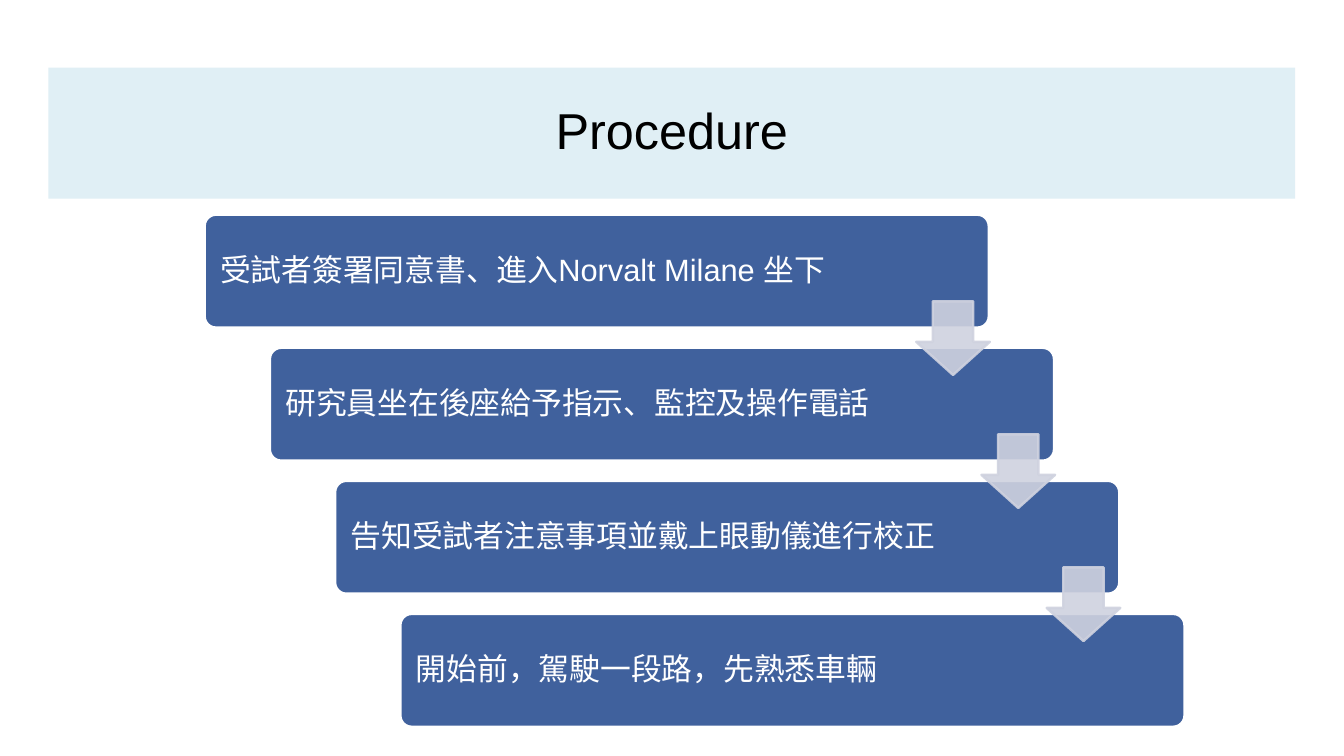
from dataclasses import dataclass

from lxml import etree
from pptx import Presentation
from pptx.dml.color import RGBColor
from pptx.enum.shapes import MSO_SHAPE as Preset
from pptx.enum.text import MSO_ANCHOR as Anchor, PP_ALIGN as Align
from pptx.oxml.ns import qn
from pptx.shapes.autoshape import Shape
from pptx.slide import Slide
from pptx.util import Pt

FONT = "Arial"
STEP_LEFT, STEP_TOP = 146.16, 153.36
STEP_WIDTH, STEP_HEIGHT = 560.16, 80.64
SHIFT_RIGHT, SHIFT_DOWN = 46.6, 95.04
ARROW_LEFT, ARROW_TOP, ARROW_SIZE = 654.48, 215.28, 52.56


@dataclass
class Box:
    left: float
    top: float
    width: float
    height: float


@dataclass
class Step:
    text: str
    right_inset: float = 106.5


STEPS = [
    Step("受試者簽署同意書、進入Norvalt Milane 坐下", 97.8),
    Step("研究員坐在後座給予指示、監控及操作電話"),
    Step("告知受試者注意事項並戴上眼動儀進行校正"),
    Step("開始前，駕駛一段路，先熟悉車輛"),
]


def color(value: str) -> RGBColor:
    return RGBColor.from_string(value)


def add_filled(slide: Slide, preset: Preset, box: Box, fill: str, line: str = "") -> Shape:
    shape = slide.shapes.add_shape(
        preset, Pt(box.left), Pt(box.top), Pt(box.width), Pt(box.height)
    )
    shape.shadow.inherit = False
    shape.fill.solid()
    shape.fill.fore_color.rgb = color(fill)
    if line:
        shape.line.color.rgb = color(line)
        shape.line.width = Pt(1.75)
    else:
        shape.line.fill.background()
    return shape


def add_text(shape: Shape, text: str, size: float, font_color: str, align: Align) -> None:
    frame = shape.text_frame
    frame.word_wrap = True
    frame.vertical_anchor = Anchor.MIDDLE
    paragraph = frame.paragraphs[0]
    paragraph.alignment = align
    paragraph.line_spacing = 0.9
    run = paragraph.add_run()
    run.text = text
    run.font.name = FONT
    run.font.size = Pt(size)
    run.font.color.rgb = color(font_color)


def add_title(slide: Slide, text: str) -> None:
    banner = add_filled(slide, Preset.RECTANGLE, Box(34.56, 48.24, 890.64, 93.6), "E0EFF5")
    add_text(banner, text, 36, "000000", Align.CENTER)


def add_step(slide: Slide, index: int, step: Step) -> None:
    box = Box(
        STEP_LEFT + index * SHIFT_RIGHT, STEP_TOP + index * SHIFT_DOWN, STEP_WIDTH, STEP_HEIGHT
    )
    shape = add_filled(slide, Preset.ROUNDED_RECTANGLE, box, "40619D", "FFFFFF")
    shape.adjustments[0] = 0.1
    shape.text_frame.margin_left = Pt(8.8)
    shape.text_frame.margin_right = Pt(step.right_inset)
    add_text(shape, step.text, 22, "FFFFFF", Align.LEFT)


def add_arrow(slide: Slide, index: int) -> None:
    box = Box(
        ARROW_LEFT + index * SHIFT_RIGHT, ARROW_TOP + index * SHIFT_DOWN, ARROW_SIZE, ARROW_SIZE
    )
    arrow = add_filled(slide, Preset.DOWN_ARROW, box, "CFD2DF", "CFD2DF")
    arrow.adjustments[0] = 0.55
    arrow.adjustments[1] = 0.45
    for tint in arrow.element.spPr.iter(qn("a:srgbClr")):
        etree.SubElement(tint, qn("a:alpha"), val="90000")


def main() -> None:
    presentation = Presentation()
    presentation.slide_width, presentation.slide_height = Pt(960), Pt(540)
    slide = presentation.slides.add_slide(presentation.slide_layouts[6])
    add_title(slide, "Procedure")
    for index, step in enumerate(STEPS):
        add_step(slide, index, step)
    for index in range(len(STEPS) - 1):
        add_arrow(slide, index)
    presentation.save("out.pptx")


if __name__ == "__main__":
    main()
